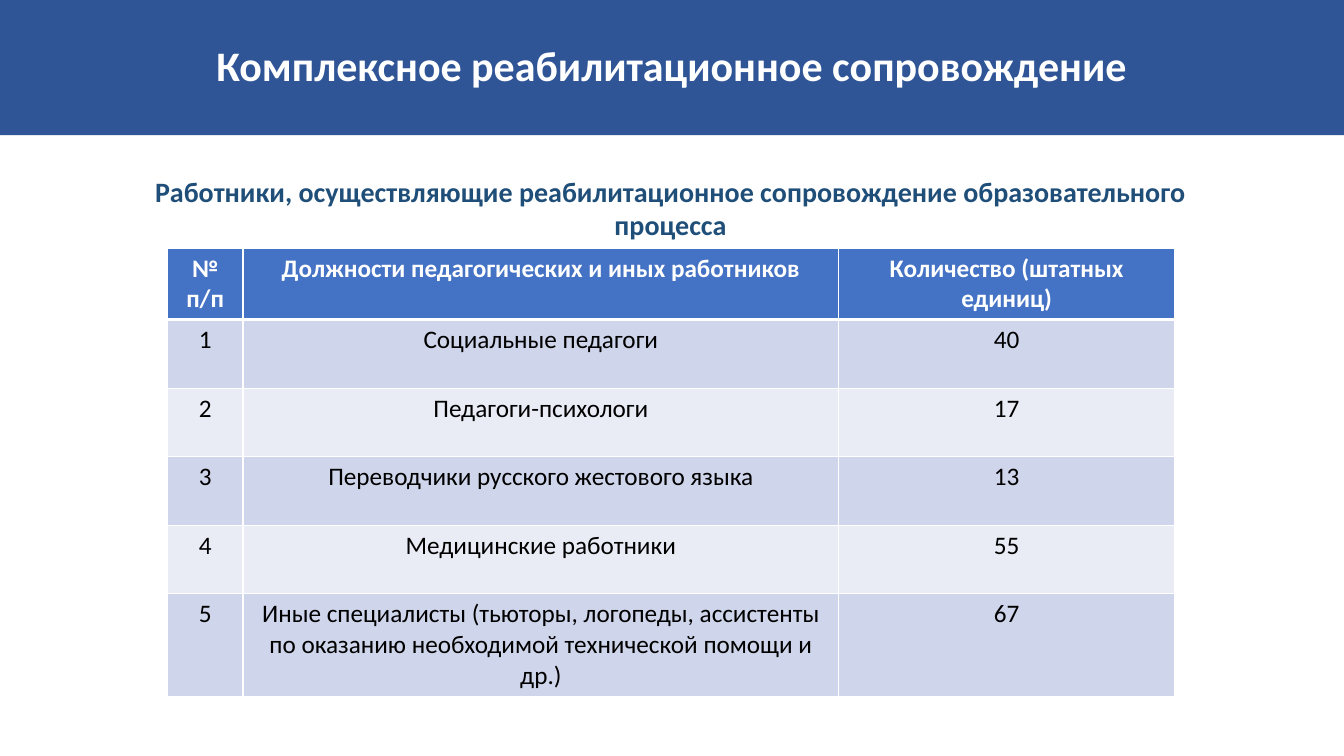
from lxml import etree
from pptx import Presentation
from pptx import util as u
from pptx.dml.color import RGBColor
from pptx.enum import text
from pptx.oxml.ns import qn

WHITE = RGBColor(0xFF, 0xFF, 0xFF)
BLACK = RGBColor(0x00, 0x00, 0x00)
BANNER = RGBColor(0x2F, 0x55, 0x97)
NAVY = RGBColor(0x1F, 0x4E, 0x79)
HEAD = RGBColor(0x44, 0x72, 0xC4)
BANDS = [RGBColor(0xE9, 0xEB, 0xF5), RGBColor(0xCF, 0xD5, 0xEA)]

STAFF = [
    ("№ п/п", "Должности педагогических и иных работников",
     "Количество (штатных единиц)"),
    ("1", "Социальные педагоги", "40"),
    ("2", "Педагоги-психологи", "17"),
    ("3", "Переводчики русского жестового языка", "13"),
    ("4", "Медицинские работники", "55"),
    ("5", "Иные специалисты (тьюторы, логопеды, ассистенты по оказанию "
     "необходимой технической помощи и др.)", "67"),
]


class Deck:
    font = "Calibri"

    def __init__(self):
        self.prs = Presentation()
        self.prs.slide_width = u.Inches(13.33)
        self.prs.slide_height = u.Inches(7.5)
        self.slide = self.prs.slides.add_slide(self.prs.slide_layouts[5])

    def style(self, frame, words, size, color, bold):
        frame.text = words
        par = frame.paragraphs[0]
        par.alignment = text.PP_ALIGN.CENTER
        for run in par.runs:
            run.font.name = self.font
            run.font.size = u.Pt(size)
            run.font.bold = bold
            run.font.color.rgb = color
        return par

    def title(self, words, height):
        box = self.slide.shapes.title
        box.left = box.top = 0
        box.width, box.height = self.prs.slide_width, u.Inches(height)
        box.fill.solid()
        box.fill.fore_color.rgb = BANNER
        frame = box.text_frame
        frame.vertical_anchor = text.MSO_ANCHOR.MIDDLE
        frame.auto_size = text.MSO_AUTO_SIZE.NONE
        self.style(frame, words, 30, WHITE, True).line_spacing = 0.9

    def label(self, words, *spot):
        box = self.slide.shapes.add_textbox(*map(u.Inches, spot))
        frame = box.text_frame
        frame.word_wrap = True
        frame.auto_size = text.MSO_AUTO_SIZE.SHAPE_TO_FIT_TEXT
        self.style(frame, words, 20, NAVY, True)

    def border(self, cell, row):
        props = cell._tc.get_or_add_tcPr()
        thick = {"lnT": 3 if row == 1 else 1, "lnB": 3 if row == 0 else 1}
        for spot, side in enumerate(("lnL", "lnR", "lnT", "lnB")):
            line = etree.Element(qn("a:" + side), w=str(u.Pt(thick.get(side, 1))))
            fill = etree.SubElement(line, qn("a:solidFill"))
            etree.SubElement(fill, qn("a:srgbClr"), val=str(WHITE))
            props.insert(spot, line)

    def table(self, data, left, top, widths, height):
        size = len(data), len(widths)
        area = left, top, sum(widths), height * len(data)
        grid = self.slide.shapes.add_table(*size, *map(u.Inches, area)).table
        for col, width in zip(grid.columns, widths):
            col.width = u.Inches(width)
        for r, row in enumerate(data):
            grid.rows[r].height = u.Inches(height)
            for c, words in enumerate(row):
                cell = grid.cell(r, c)
                cell.fill.solid()
                cell.fill.fore_color.rgb = BANDS[r % 2] if r else HEAD
                self.border(cell, r)
                self.style(cell.text_frame, words, 18, BLACK if r else WHITE, r == 0)


def main():
    deck = Deck()
    deck.title("Комплексное реабилитационное сопровождение", 1.34)
    deck.table(STAFF, 1.66, 2.46, (0.75, 5.91, 3.33), 0.68)
    deck.label("Работники, осуществляющие реабилитационное сопровождение "
               "образовательного процесса", 0.98, 1.68, 11.34, 0.77)
    deck.prs.save("out.pptx")


if __name__ == "__main__":
    main()
